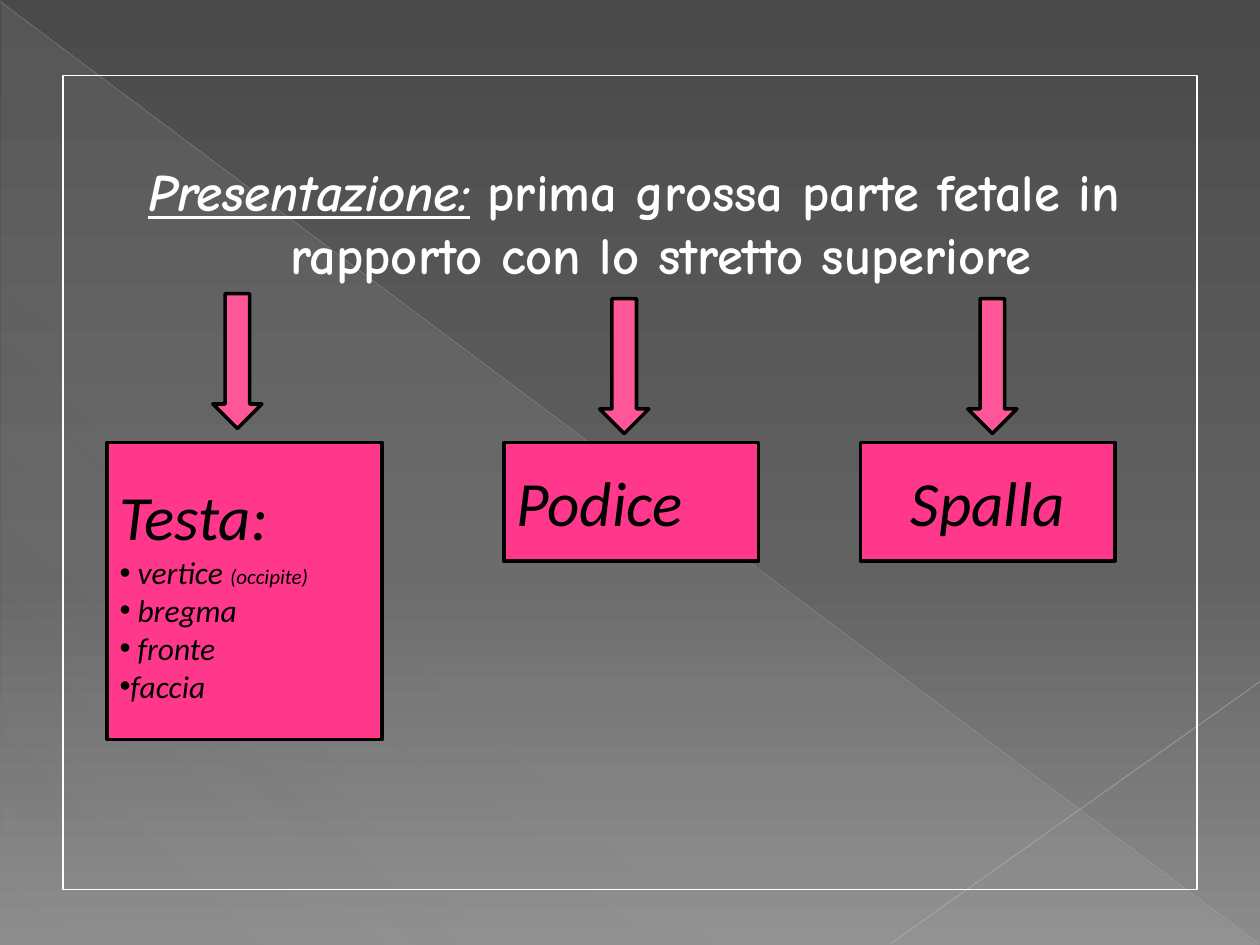
"""Build the slide on fetal presentation: a heading and three boxes under arrows."""
from lxml import etree
from pptx import Presentation
from pptx.dml.color import RGBColor
from pptx.enum.shapes import MSO_CONNECTOR, MSO_SHAPE as SHAPE
from pptx.enum.text import MSO_ANCHOR as ANCHOR, MSO_AUTO_SIZE, PP_ALIGN as ALIGN
from pptx.oxml.ns import qn
from pptx.util import Cm, Pt

rgb = RGBColor.from_string


def set_gradient(fill, element, stops, angle):
    fill.gradient()
    fill.gradient_angle = 360 - angle
    gs_lst = next(element.iter(qn("a:gsLst")))
    for gs in list(gs_lst):
        gs_lst.remove(gs)
    for pos, color, alpha in stops:
        gs = etree.SubElement(gs_lst, qn("a:gs"), pos=str(pos * 1000))
        clr = etree.SubElement(gs, qn("a:srgbClr"), val=color)
        if alpha < 100:
            etree.SubElement(clr, qn("a:alpha"), val=str(alpha * 1000))


def add_run(p, text, size, font, color, bold=False, italic=False, underline=False):
    r = p.add_run()
    r.text = text
    f = r.font
    f.size, f.name, f.color.rgb = Pt(size), font, rgb(color)
    f.bold, f.italic, f.underline = bold, italic, underline


prs = Presentation()
prs.slide_width, prs.slide_height = Cm(25.4), Cm(19.05)
s = prs.slides.add_slide(prs.slide_layouts[5])
set_gradient(s.background.fill, s._element,
             [(0, "4A4A4A", 100), (60, "626262", 100), (100, "8C8C8C", 100)], 90)

sp = s.shapes.add_shape(SHAPE.RIGHT_TRIANGLE, Cm(0.03), Cm(0.05), Cm(25.35), Cm(19))
sp.shadow.inherit = False
sp.line.fill.background()
set_gradient(sp.fill, sp._element,
             [(0, "D2D2D2", 10), (70, "D2D2D2", 8), (100, "D2D2D2", 1)], 133)

for x1, y1, x2, y2, color, width, alpha in [
    (0, 0.03, 25.37, 19.02, "BFBFBF", 0.39, 35),
    (25.4, 13.74, 17.96, 19.02, "C6C6C6", 0.47, 45),
]:
    cx = s.shapes.add_connector(MSO_CONNECTOR.STRAIGHT, Cm(x1), Cm(y1), Cm(x2), Cm(y2))
    cx.line.color.rgb, cx.line.width = rgb(color), Pt(width)
    clr = next(cx._element.iter(qn("a:srgbClr")))
    etree.SubElement(clr, qn("a:alpha"), val=str(alpha * 1000))
    etree.SubElement(cx._element.spPr, qn("a:effectLst"))

title = s.shapes.title
title._element.getparent().append(title._element)
title.left, title.top, title.width, title.height = Cm(1.27), Cm(1.52), Cm(22.86), Cm(16.41)
title.line.color.rgb, title.line.width = rgb("FFFFFF"), Pt(0.75)
tf = title.text_frame
tf.word_wrap, tf.auto_size = True, MSO_AUTO_SIZE.NONE
tf.vertical_anchor, tf.margin_top = ANCHOR.TOP, Cm(1.68)
p = tf.paragraphs[0]
p.alignment = ALIGN.CENTER
pPr = p._p.get_or_add_pPr()
pPr.set("marL", str(Cm(1.24)))
pPr.set("indent", str(-Cm(1.07)))
add_run(p, "Presentazione:", 30, "Comic Neue", "FFFFFF", True, True, True)
add_run(p, " ", 30, "Comic Neue", "FFFFFF")
add_run(p, "prima grossa parte fetale in rapporto con lo stretto superiore",
        30, "Comic Neue", "FFFFFF", True)

testa = [
    [("Testa:", 36)],
    [(" vertice ", 18), ("(occipite)", 12)],
    [(" bregma", 18)],
    [(" fronte ", 18)],
    [("faccia ", 18)],
]
arrows = [(x, y, 0.99, 2.72, SHAPE.DOWN_ARROW, "FF5698", ALIGN.CENTER, [])
          for x, y in [(4.29, 5.92), (12.09, 6.02), (19.51, 6.02)]]
boxes = [(x, 8.92, w, h, SHAPE.RECTANGLE, "FF388C", align, lines)
         for x, w, h, align, lines in [
             (2.16, 5.54, 5.99, ALIGN.JUSTIFY, testa),
             (10.16, 5.13, 2.39, ALIGN.JUSTIFY, [[("Podice", 36)]]),
             (17.35, 5.13, 2.39, ALIGN.CENTER, [[("Spalla", 36)]]),
         ]]

for x, y, w, h, shape, color, align, lines in arrows + boxes:
    sp = s.shapes.add_shape(shape, Cm(x), Cm(y), Cm(w), Cm(h))
    sp.shadow.inherit = False
    sp.fill.solid()
    sp.fill.fore_color.rgb = rgb(color)
    sp.line.color.rgb, sp.line.width = rgb("000000"), Pt(2)
    tf = sp.text_frame
    tf.word_wrap, tf.vertical_anchor = True, ANCHOR.MIDDLE
    for i, runs in enumerate(lines):
        p = tf.add_paragraph() if i else tf.paragraphs[0]
        p.alignment = align
        if i:
            pPr = p._p.get_or_add_pPr()
            etree.SubElement(pPr, qn("a:buFont"), typeface="Arial")
            etree.SubElement(pPr, qn("a:buChar"), char="•")
        for text, size in runs:
            add_run(p, text, size, "Calibri", "000000", italic=True)

prs.save("out.pptx")
